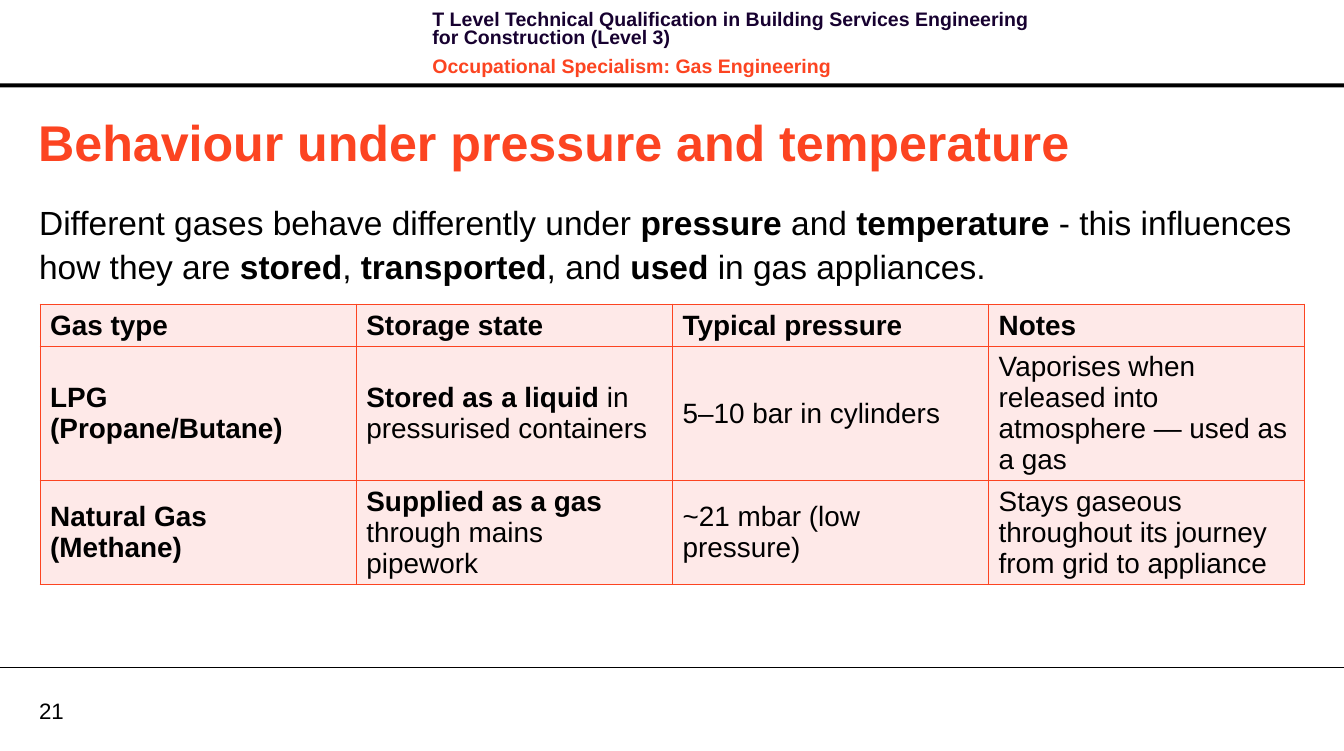
from dataclasses import dataclass

from lxml.etree import SubElement
from pptx import Presentation
from pptx.dml.color import RGBColor
from pptx.enum.shapes import MSO_CONNECTOR as Connector, MSO_SHAPE as Preset
from pptx.enum.text import MSO_ANCHOR as Anchor, MSO_AUTO_SIZE as AutoSize, PP_ALIGN as Align
from pptx.oxml import parse_xml
from pptx.oxml.ns import nsdecls, qn
from pptx.util import Inches, Pt


@dataclass(frozen=True)
class Theme:
    """Colours, font and type sizes of the slide."""
    font: str = "Arial"
    black: str = "000000"
    navy: str = "170130"
    orange: str = "FC4421"
    blush: str = "FEE9E8"
    title: int = 36
    body: int = 24
    table: int = 20
    number: int = 16
    header: int = 14


THEME = Theme()
SLIDE_WIDTH, SLIDE_HEIGHT = 13.39, 7.48
INTRO = ("Different gases behave differently under **pressure** and **temperature** - this "
         "influences how they are **stored**, **transported**, and **used** in gas appliances.")
GAS_ROWS = [
    ["**Gas type**", "**Storage state**", "**Typical pressure**", "**Notes**"],
    ["**LPG (Propane/Butane)**", "**Stored as a liquid** in pressurised containers",
     "5–10 bar in cylinders", "Vaporises when released into atmosphere — used as a gas"],
    ["**Natural Gas (Methane)**", "**Supplied as a gas** through mains pipework",
     "~21 mbar (low pressure)", "Stays gaseous throughout its journey from grid to appliance"],
]
ROW_HEIGHTS = [0.42, 1.34, 1.03]
COLUMN_WIDTH = 3.15


def write_text(paragraph, text, *, size, color=THEME.black, spacing=None, before=0, after=0):
    """Write text in a paragraph, with bold between double asterisks."""
    paragraph.alignment = Align.LEFT
    paragraph.space_before, paragraph.space_after = Pt(before), Pt(after)
    if spacing is not None:
        paragraph.line_spacing = spacing
    for index, part in enumerate(text.split("**")):
        if part:
            run = paragraph.add_run()
            run.text = part
            run.font.name, run.font.size = THEME.font, Pt(size)
            run.font.bold = index % 2 == 1
            run.font.color.rgb = RGBColor.from_string(color)


def set_frame(frame, *, anchor=Anchor.TOP, inset=(0, 0)):
    """Set wrapping, anchor and side and top insets of a text frame."""
    frame.word_wrap, frame.auto_size = True, AutoSize.NONE
    frame.vertical_anchor = anchor
    frame.margin_left = frame.margin_right = Inches(inset[0])
    frame.margin_top = frame.margin_bottom = Inches(inset[1])
    return frame


def add_text_box(slide, left, top, width, height, **frame_format):
    """Add a text box and return its frame."""
    shape = slide.shapes.add_textbox(Inches(left), Inches(top), Inches(width), Inches(height))
    return set_frame(shape.text_frame, **frame_format)


def add_rules(slide):
    """Add the thick header bar and the thin footer line."""
    bar = slide.shapes.add_shape(Preset.RECTANGLE, 0, Inches(0.83),
                                 Inches(SLIDE_WIDTH), Inches(0.04))
    bar.shadow.inherit = False
    bar.fill.solid()
    bar.fill.fore_color.rgb = RGBColor.from_string(THEME.black)
    bar.line.fill.background()
    line = slide.shapes.add_connector(Connector.STRAIGHT, 0, Inches(6.65),
                                      Inches(SLIDE_WIDTH), Inches(6.65))
    line.line.color.rgb = RGBColor.from_string(THEME.black)
    line.line.width = Pt(0.75)
    SubElement(line._element.spPr, qn("a:effectLst"))


def add_header(slide):
    """Add the course name and specialism."""
    frame = add_text_box(slide, 4.21, 0.07, 6.37, 0.64, inset=(0.1, 0.05))
    style = dict(size=THEME.header, spacing=Pt(13.1), after=4)
    write_text(frame.paragraphs[0], "**T Level Technical Qualification in Building Services "
               "Engineering for Construction (Level 3)**", color=THEME.navy, **style)
    write_text(frame.add_paragraph(), "**Occupational Specialism: Gas Engineering**",
               color=THEME.orange, before=4, **style)


def add_title(slide, text):
    """Place and format the title placeholder."""
    title = slide.shapes.title
    title.left, title.top = Inches(0.28), Inches(1.05)
    title.width, title.height = Inches(12.72), Inches(0.71)
    frame = set_frame(title.text_frame, anchor=Anchor.MIDDLE, inset=(0.1, 0.05))
    write_text(frame.paragraphs[0], f"**{text}**", size=THEME.title, color=THEME.orange)


def format_cell(cell, text):
    """Fill, border and write one table cell."""
    cell.fill.solid()
    cell.fill.fore_color.rgb = RGBColor.from_string(THEME.blush)
    cell.vertical_anchor = Anchor.MIDDLE
    properties = cell._tc.get_or_add_tcPr()
    for index, side in enumerate(("lnL", "lnR", "lnT", "lnB")):
        properties.insert(index, parse_xml(
            f'<a:{side} {nsdecls("a")} w="{Pt(1)}"><a:solidFill>'
            f'<a:srgbClr val="{THEME.orange}"/></a:solidFill></a:{side}>'))
    write_text(cell.text_frame.paragraphs[0], text, size=THEME.table)


def add_gas_table(slide):
    """Add the table that compares the gases."""
    columns = len(GAS_ROWS[0])
    table = slide.shapes.add_table(len(GAS_ROWS), columns, Inches(0.4), Inches(3.03),
                                   Inches(COLUMN_WIDTH * columns),
                                   Inches(sum(ROW_HEIGHTS))).table
    table.first_row = table.horz_banding = False
    for row, height, texts in zip(table.rows, ROW_HEIGHTS, GAS_ROWS):
        row.height = Inches(height)
        for cell, text in zip(row.cells, texts):
            format_cell(cell, text)


def main():
    """Build and save the slide."""
    presentation = Presentation()
    presentation.slide_width = Inches(SLIDE_WIDTH)
    presentation.slide_height = Inches(SLIDE_HEIGHT)
    slide = presentation.slides.add_slide(presentation.slide_layouts.get_by_name("Title Only"))
    add_rules(slide)
    number = add_text_box(slide, 0.39, 6.94, 0.64, 0.27, anchor=Anchor.MIDDLE)
    write_text(number.paragraphs[0], "21", size=THEME.number)
    add_header(slide)
    add_title(slide, "Behaviour under pressure and temperature")
    intro = add_text_box(slide, 0.39, 1.97, 12.6, 1)
    write_text(intro.paragraphs[0], INTRO, size=THEME.body, spacing=1.1, after=12)
    add_gas_table(slide)
    presentation.save("out.pptx")


if __name__ == "__main__":
    main()
